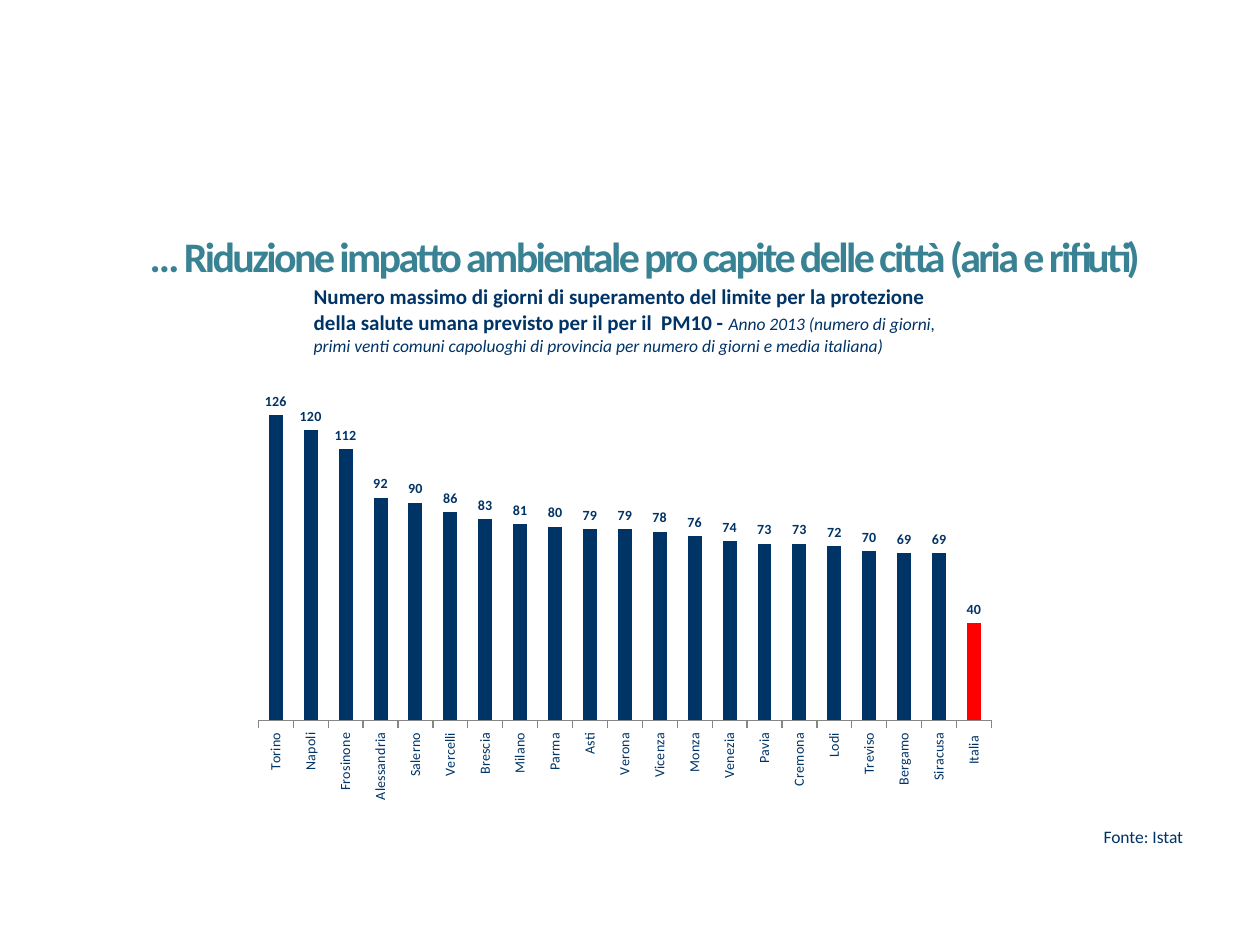
import pptx
import pptx.chart.data
import pptx.dml.color
import pptx.enum.chart
import pptx.enum.text
import pptx.util

Inches = pptx.util.Inches
Pt = pptx.util.Pt
RGBColor = pptx.dml.color.RGBColor

NAVY = RGBColor(0x00, 0x33, 0x66)
TEAL = RGBColor(0x38, 0x82, 0x94)
RED = RGBColor(0xFF, 0x00, 0x00)
GREY = RGBColor(0x86, 0x86, 0x86)
WHITE = RGBColor(0xFF, 0xFF, 0xFF)
BLACK = RGBColor(0x00, 0x00, 0x00)

PM10_DAYS = {
    "Torino": 126, "Napoli": 120, "Frosinone": 112, "Alessandria": 92,
    "Salerno": 90, "Vercelli": 86, "Brescia": 83, "Milano": 81,
    "Parma": 80, "Asti": 79, "Verona": 79, "Vicenza": 78, "Monza": 76,
    "Venezia": 74, "Pavia": 73, "Cremona": 73, "Lodi": 72, "Treviso": 70,
    "Bergamo": 69, "Siracusa": 69, "Italia ": 40,
}


def apply(target, values):
    for name, value in values.items():
        setattr(target, name, value)


class SlideWriter:
    """Holds the deck's text style and draws elements on the current slide."""

    face = "Calibri"

    def __init__(self, slide):
        self.slide = slide

    def style(self, font, size, color=NAVY, **values):
        apply(font, {"name": self.face, "size": Pt(size), **values})
        font.color.rgb = color

    def run(self, paragraph, wording, size, spacing=None, **values):
        run = paragraph.add_run()
        run.text = wording
        self.style(run.font, size, **values)
        if spacing is not None:
            run._r.get_or_add_rPr().set("spc", str(round(spacing * 100)))

    def text(self, box, wording, size, align=pptx.enum.text.PP_ALIGN.LEFT, **values):
        frame = self.slide.shapes.add_textbox(*map(Inches, box)).text_frame
        apply(frame, {
            "word_wrap": True,
            "auto_size": pptx.enum.text.MSO_AUTO_SIZE.SHAPE_TO_FIT_TEXT,
        })
        paragraph = frame.paragraphs[0]
        paragraph.alignment = align
        self.run(paragraph, wording, size, **values)

    def caption_table(self, box, runs):
        table = self.slide.shapes.add_table(1, 1, *map(Inches, box)).table
        apply(table, {"first_row": False, "horz_banding": False})
        cell = table.cell(0, 0)
        apply(cell, {
            "margin_left": Inches(0.01), "margin_right": Inches(0.01),
            "margin_top": Inches(0.01), "margin_bottom": 0,
            "vertical_anchor": pptx.enum.text.MSO_ANCHOR.BOTTOM,
        })
        cell.fill.solid()
        cell.fill.fore_color.rgb = WHITE
        for wording, size, values in runs:
            self.run(cell.text_frame.paragraphs[0], wording, size, **values)

    def column_chart(self, box, days, highlighted):
        data = pptx.chart.data.CategoryChartData(number_format="0")
        data.categories = list(days)
        data.add_series("Series 1", list(days.values()))
        chart = self.slide.shapes.add_chart(
            pptx.enum.chart.XL_CHART_TYPE.COLUMN_CLUSTERED, *map(Inches, box), data
        ).chart
        apply(chart, {"has_legend": False, "has_title": False})
        self.style(chart.font, 10, BLACK, name="Arial")

        apply(chart.value_axis, {
            "visible": False, "has_major_gridlines": False,
            "minimum_scale": 0, "maximum_scale": 140,
        })
        cities = chart.category_axis
        apply(cities, {
            "has_major_gridlines": False,
            "major_tick_mark": pptx.enum.chart.XL_TICK_MARK.OUTSIDE,
        })
        cities.format.line.color.rgb = GREY
        cities.format.line.width = Pt(0.75)
        self.style(cities.tick_labels.font, 8, bold=False)
        body = cities._element.txPr.bodyPr
        body.set("rot", "-5400000")
        body.set("vert", "horz")

        plot = chart.plots[0]
        apply(plot, {
            "gap_width": 150, "vary_by_categories": False, "has_data_labels": True,
        })
        apply(plot.data_labels, {
            "show_value": True, "number_format": "0",
            "number_format_is_linked": False,
            "position": pptx.enum.chart.XL_LABEL_POSITION.OUTSIDE_END,
        })
        self.style(plot.data_labels.font, 8, bold=True)
        columns = plot.series[0]
        average = columns.points[list(days).index(highlighted)]
        for part, color in ((columns, NAVY), (average, RED)):
            part.format.fill.solid()
            part.format.fill.fore_color.rgb = color


def main():
    deck = pptx.Presentation()
    apply(deck, {"slide_width": Inches(10), "slide_height": Inches(7.5)})
    writer = SlideWriter(deck.slides.add_slide(deck.slide_layouts[6]))
    writer.text(
        (0.98, 1.78, 8.27, 0.91),
        "… Riduzione impatto ambientale pro capite delle città (aria e rifiuti)",
        24, pptx.enum.text.PP_ALIGN.CENTER, color=TEAL, bold=True, spacing=-1.5,
    )
    writer.column_chart((1.93, 2.96, 6.06, 3.46), PM10_DAYS, "Italia ")
    writer.caption_table((2.48, 2.25, 4.96, 0.58), [
        ("Numero massimo di giorni di superamento del limite per la protezione "
         "della salute umana previsto per il per il  PM10 - ", 12, {"bold": True}),
        ("Anno 2013 (numero di giorni, primi venti comuni capoluoghi di provincia "
         "per numero di giorni e media italiana)", 10, {"bold": False, "italic": True}),
    ])
    writer.text((8.66, 6.51, 1.22, 0.27), "Fonte: Istat", 10)
    deck.save("out.pptx")


if __name__ == "__main__":
    main()
